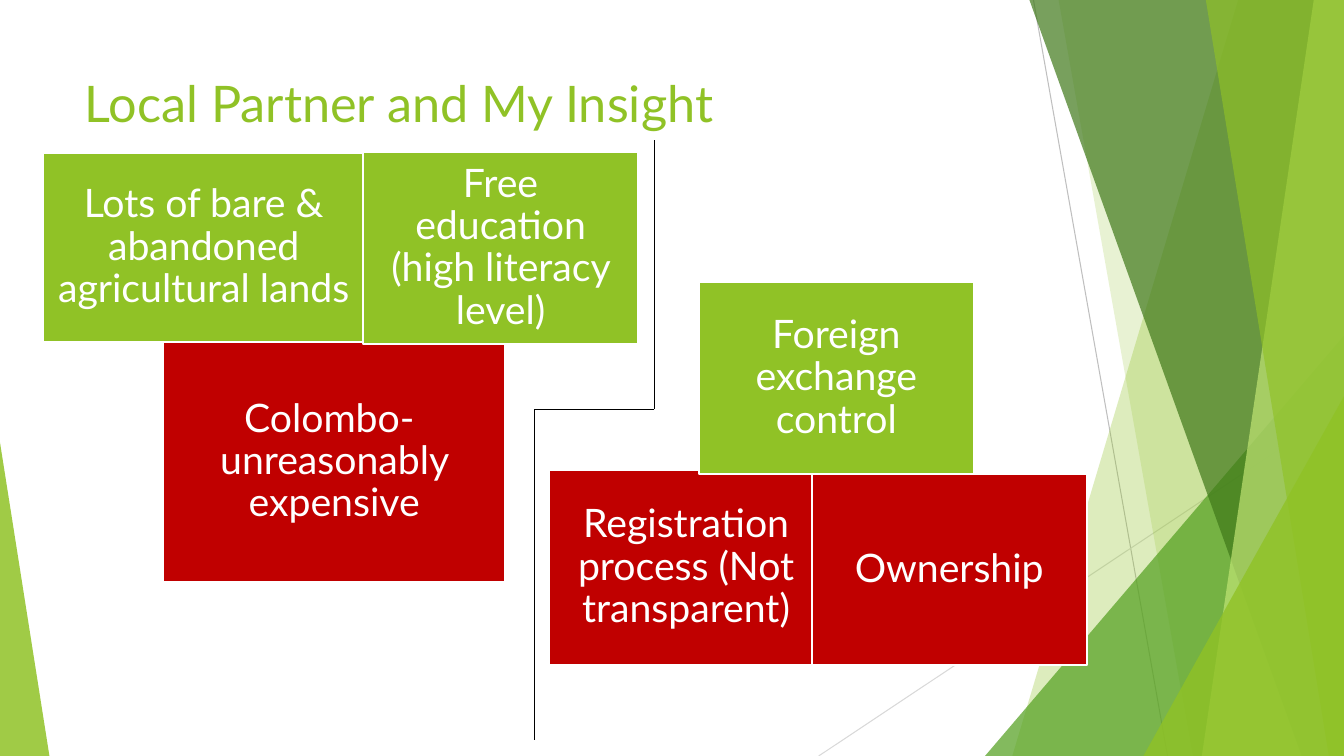
from itertools import pairwise

from pptx import Presentation
from pptx.dml.color import RGBColor
from pptx.enum.shapes import MSO_CONNECTOR, MSO_SHAPE
from pptx.enum.text import MSO_ANCHOR, PP_ALIGN
from pptx.oxml.ns import qn
from pptx.util import Inches, Pt

GREEN = RGBColor(0x90, 0xC2, 0x26)
MID_GREEN = RGBColor(0x54, 0xA0, 0x21)
DARK_GREEN = RGBColor(0x3F, 0x78, 0x19)
PALE_GREEN = RGBColor(0xC0, 0xE4, 0x74)
RED = RGBColor(0xC0, 0x00, 0x00)
WHITE = RGBColor(0xFF, 0xFF, 0xFF)
BLACK = RGBColor(0x00, 0x00, 0x00)
GREY = RGBColor(0xBF, 0xBF, 0xBF)
LIGHT_GREY = RGBColor(0xD9, 0xD9, 0xD9)

FONT = "Lato"
WIDTH, HEIGHT = 13.33, 7.5

TITLE = "Local Partner and My Insight"

# Text, colour, left, top, width, height
INSIGHTS = [
    ("Colombo-  unreasonably expensive", RED, 1.62, 3.38, 3.39, 2.4),
    ("Lots of bare & abandoned agricultural lands ", GREEN, 0.43, 1.52, 3.18, 1.87),
    ("Free education (high literacy level)", GREEN, 3.6, 1.51, 2.73, 1.9),
    ("Registration process (Not transparent)", RED, 5.44, 4.66, 2.73, 1.94),
    ("Foreign exchange control", GREEN, 6.93, 2.8, 2.73, 1.9),
    ("Ownership", RED, 8.05, 4.7, 2.73, 1.9),
]

DIVIDER = [(6.49, 1.39), (6.49, 4.06), (5.3, 4.06), (5.3, 7.34)]

# Start, end, colour
BACKDROP_LINES = [
    ((10.25, 0), (11.58, HEIGHT), GREY),
    ((WIDTH, 4.03), (8.12, HEIGHT), LIGHT_GREY),
]

# Panels run to the right edge: left x at the top, left x at the bottom.
# Wedges rise from the bottom edge: left, top, width, apex position.
BACKDROP = [
    ("panel", (12.28, 10.04), GREEN, 30),
    ("panel", (10.5, 11.83), GREEN, 20),
    ("wedge", (9.77, 3.33, 3.56, 1), MID_GREEN, 72),
    ("panel", (10.21, 12.91), DARK_GREEN, 70),
    ("panel", (13.03, 11.92), PALE_GREEN, 70),
    ("panel", (11.96, 13.18), GREEN, 65),
    ("wedge", (11.34, 3.93, 1.99, 1), GREEN, 80),
    ("wedge", (0, 4.39, 0.49, 0), GREEN, 85),
]


def add_line(slide, start, end, color, weight):
    line = slide.shapes.add_connector(
        MSO_CONNECTOR.STRAIGHT, *(Inches(v) for v in (*start, *end)))
    line.line.color.rgb = color
    line.line.width = Pt(weight)
    properties = line._element.spPr
    properties.append(properties.makeelement(qn("a:effectLst"), {}))


def add_panel(slide, top_x, bottom_x):
    builder = slide.shapes.build_freeform(Inches(top_x), 0, scale=1.0)
    corners = [(WIDTH, 0), (WIDTH, HEIGHT), (bottom_x, HEIGHT)]
    builder.add_line_segments([(Inches(x), Inches(y)) for x, y in corners], close=True)
    return builder.convert_to_shape()


def add_wedge(slide, left, top, width, apex):
    wedge = slide.shapes.add_shape(
        MSO_SHAPE.ISOSCELES_TRIANGLE,
        *(Inches(v) for v in (left, top, width, HEIGHT - top)))
    wedge.adjustments[0] = apex
    return wedge


def tint(shape, color, opacity):
    """Fill without outline or shadow; opacity is in percent."""
    shape.shadow.inherit = False
    shape.line.fill.background()
    shape.fill.solid()
    shape.fill.fore_color.rgb = color
    rgb = shape._element.spPr.find(qn("a:solidFill"))[0]
    rgb.append(rgb.makeelement(qn("a:alpha"), {"val": str(opacity * 1000)}))


def write(frame, text, size, color, align):
    frame.word_wrap = True
    frame.text = text
    paragraph = frame.paragraphs[0]
    paragraph.alignment = align
    font = paragraph.runs[0].font
    font.name, font.size, font.color.rgb = FONT, Pt(size), color


def add_insight(slide, text, color, *box):
    card = slide.shapes.add_shape(MSO_SHAPE.RECTANGLE, *(Inches(v) for v in box))
    card.shadow.inherit = False
    card.fill.solid()
    card.fill.fore_color.rgb = color
    card.line.color.rgb = WHITE
    card.line.width = Pt(1.5)
    frame = card.text_frame
    frame.margin_left = frame.margin_right = Inches(0.12)
    frame.margin_top = frame.margin_bottom = Inches(0.12)
    frame.vertical_anchor = MSO_ANCHOR.MIDDLE
    write(frame, text, 28, WHITE, PP_ALIGN.CENTER)
    frame.paragraphs[0].line_spacing = 0.9


def main():
    deck = Presentation()
    deck.slide_width, deck.slide_height = Inches(WIDTH), Inches(HEIGHT)
    slide = deck.slides.add_slide(deck.slide_layouts[5])

    for start, end, color in BACKDROP_LINES:
        add_line(slide, start, end, color, 0.75)
    makers = {"panel": add_panel, "wedge": add_wedge}
    for kind, geometry, color, opacity in BACKDROP:
        tint(makers[kind](slide, *geometry), color, opacity)

    title = slide.shapes.title
    title.left, title.top = Inches(0.74), Inches(0.67)
    title.width, title.height = Inches(9.4), Inches(1.44)
    title.text_frame.vertical_anchor = MSO_ANCHOR.TOP
    write(title.text_frame, TITLE, 36, GREEN, PP_ALIGN.LEFT)

    for insight in INSIGHTS:
        add_insight(slide, *insight)
    for start, end in pairwise(DIVIDER):
        add_line(slide, start, end, BLACK, 1)

    deck.save("out.pptx")


if __name__ == "__main__":
    main()
